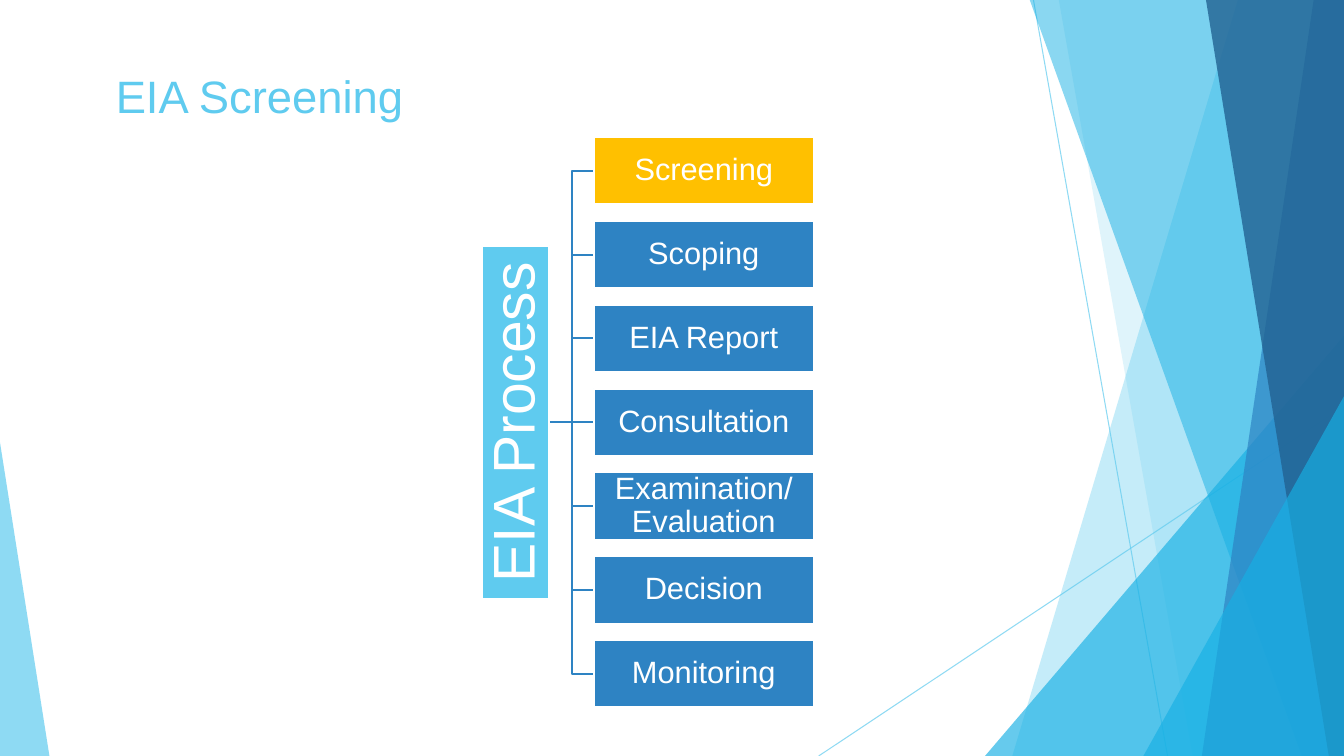
from lxml.etree import SubElement
from pptx import Presentation
from pptx.dml.color import RGBColor
from pptx.enum.shapes import MSO_CONNECTOR as Link, MSO_SHAPE as Shape
from pptx.enum.text import MSO_ANCHOR as Anchor, PP_ALIGN as Align
from pptx.oxml.ns import qn
from pptx.util import Inches, Pt

# Content
TITLE = "EIA Screening"
ROOT = "EIA Process"
STEPS = ["Screening", "Scoping", "EIA Report", "Consultation",
         "Examination/ Evaluation", "Decision", "Monitoring"]
SKY, CYAN, BLUE, NAVY = "5FCBEF", "17B0E4", "2E83C3", "226292"
GOLD, WHITE = "FFC000", "FFFFFF"

# Backdrop, back to front
WIDE, HIGH, TOP = 13.33, 7.5, -0.01
RAYS = [((10.25, 0), (11.58, HIGH)), ((WIDE, 4.03), (8.12, HIGH))]
# Band: top left x, bottom left x; peak: left, top, width, apex ratio
PANELS = [
    ("band", (12.28, 10.04), SKY, 36),
    ("band", (10.5, 11.83), SKY, 20),
    ("peak", (9.77, 3.33, 3.56, 1), CYAN, 66),
    ("band", (10.21, 12.91), CYAN, 50),
    ("band", (13.03, 11.92), BLUE, 70),
    ("band", (11.96, 13.18), NAVY, 80),
    ("peak", (11.34, 3.93, 1.99, 1), CYAN, 66),
    ("peak", (0, 4.39, 0.49, 0), SKY, 70),
]

# Diagram layout
LEFT, FIRST, LAST = 5.89, 1.36, 6.35
BOX_W, BOX_H = 2.18, 0.67
ROOT_X, ROOT_H = 4.78, 3.5
PITCH = (LAST - FIRST) / (len(STEPS) - 1)
MID = (FIRST + LAST + BOX_H) / 2

BOX_TEXT = dict(word_wrap=True, vertical_anchor=Anchor.MIDDLE)
BOX_PARA = dict(alignment=Align.CENTER, line_spacing=0.9)
TITLE_TEXT = dict(word_wrap=True, vertical_anchor=Anchor.TOP,
                  margin_top=Inches(0.09))

deck = Presentation()
deck.slide_width, deck.slide_height = Inches(WIDE), Inches(HIGH)
slide = deck.slides.add_slide(deck.slide_layouts[6])
shapes = slide.shapes


def put(obj, vals):
    for key, val in vals.items():
        setattr(obj, key, val)


def paint(fill, color, alpha=100):
    fill.solid()
    fill.fore_color.rgb = RGBColor.from_string(color)
    if alpha < 100:
        tint = fill._xPr.find(".//" + qn("a:srgbClr"))
        SubElement(tint, qn("a:alpha"), val=str(alpha * 1000))


def write(shape, text, size, color, frame, para):
    tf = shape.text_frame
    put(tf, frame)
    p = tf.paragraphs[0]
    put(p, para)
    run = p.add_run()
    run.text = text
    put(run.font, dict(name="Arial", size=Pt(size)))
    paint(run.font.fill, color)


def join(kind, start, end, color, width, alpha=100):
    ends = [Inches(v) for v in (*start, *end)]
    line = shapes.add_connector(kind, *ends)
    line.line.width = Pt(width)
    paint(line.line.fill, color, alpha)
    SubElement(line._element.spPr, qn("a:effectLst"))
    return line


def box(x, y, w, h, text, size, color, inset):
    rect = shapes.add_shape(Shape.RECTANGLE, *map(Inches, (x, y, w, h)))
    rect.shadow.inherit = False
    paint(rect.fill, color)
    paint(rect.line.fill, WHITE)
    rect.line.width = Pt(1.5)
    sides = ("left", "top", "right", "bottom")
    pads = {f"margin_{side}": Inches(inset) for side in sides}
    write(rect, text, size, WHITE, {**BOX_TEXT, **pads}, BOX_PARA)
    return rect


def band(top_x, low_x):
    form = shapes.build_freeform(Inches(top_x), Inches(TOP))
    rest = [(WIDE, TOP), (WIDE, HIGH), (low_x, HIGH)]
    form.add_line_segments([(Inches(x), Inches(y)) for x, y in rest])
    return form.convert_to_shape()


def peak(x, y, w, apex):
    size = map(Inches, (x, y, w, HIGH - y))
    form = shapes.add_shape(Shape.ISOSCELES_TRIANGLE, *size)
    form.adjustments[0] = apex
    return form


# Backdrop
for start, end in RAYS:
    join(Link.STRAIGHT, start, end, SKY, 0.75, 70)
for kind, spot, color, alpha in PANELS:
    panel = (band if kind == "band" else peak)(*spot)
    panel.shadow.inherit = False
    paint(panel.fill, color, alpha)
    panel.line.fill.background()

# Title
head = shapes.add_textbox(*map(Inches, (1.05, 0.59, 9.07, 0.55)))
write(head, TITLE, 32.4, SKY, TITLE_TEXT, {})

# Process bar, text reading upwards
root = box(ROOT_X, MID - ROOT_H / 2, BOX_H, ROOT_H, ROOT, 42, SKY, 0.03)
root.text_frame._txBody.bodyPr.set("vert", "vert270")

# Steps, each joined to the bar
for i, step in enumerate(STEPS):
    y = FIRST + i * PITCH
    color = GOLD if i == 0 else BLUE
    rect = box(LEFT, y, BOX_W, BOX_H, step, 22, color, 0.02)
    kind = Link.STRAIGHT if i == len(STEPS) // 2 else Link.ELBOW
    line = join(kind, (ROOT_X + BOX_H, MID), (LEFT, y + BOX_H / 2), BLUE, 1.5)
    line.begin_connect(root, 3)
    line.end_connect(rect, 1)
    # Lines lie behind the boxes
    root._element.addprevious(line._element)

deck.save("out.pptx")
